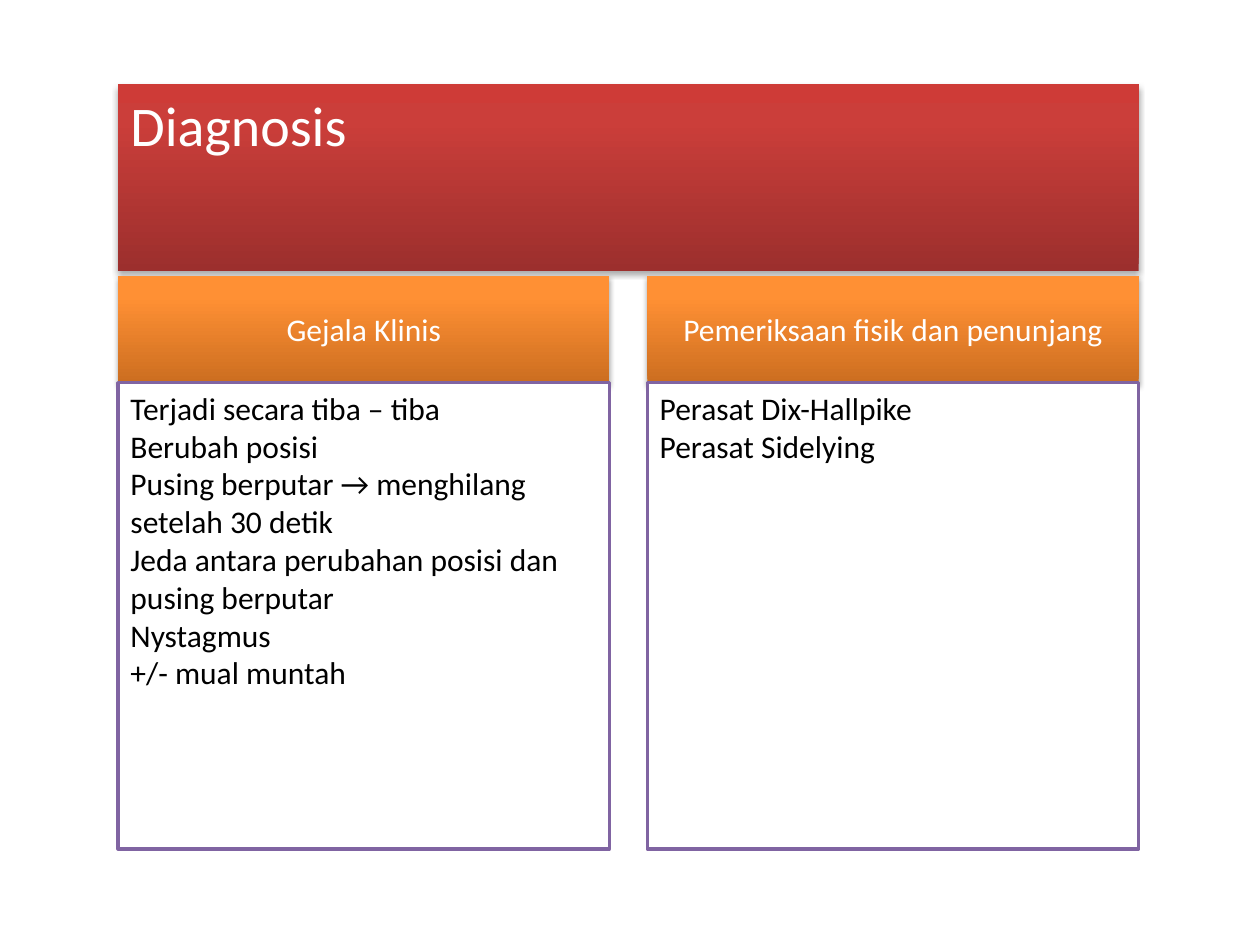
from copy import deepcopy

from lxml import etree
from pptx import Presentation
from pptx import util as u
from pptx.dml.color import RGBColor
from pptx.enum import shapes, text
from pptx.oxml import ns

WHITE = RGBColor(0xFF, 0xFF, 0xFF)
BLACK = RGBColor(0, 0, 0)
PURPLE = RGBColor(0x80, 0x64, 0xA2)
RED_STOPS = [(0, RGBColor(0x9C, 0x2F, 0x2D)),
             (0.8, RGBColor(0xCB, 0x3E, 0x3A)),
             (1, RGBColor(0xCE, 0x3B, 0x37))]
ORANGE_STOPS = [(0, RGBColor(0xCC, 0x6E, 0x20)),
                (0.8, RGBColor(0xFF, 0x90, 0x34)),
                (1, RGBColor(0xFF, 0x91, 0x36))]


class DiagnosisSlide:
    font_name = "Calibri"

    def __init__(self, presentation):
        self.slide = presentation.slides.add_slide(presentation.slide_layouts[6])

    def box(self, area, lines, size, color, anchor, align):
        """A plain rectangle holding one paragraph per line."""
        rect = self.slide.shapes.add_shape(
            shapes.MSO_SHAPE.RECTANGLE, *(u.Pt(length) for length in area))
        rect.shadow.inherit = False
        frame = rect.text_frame
        frame.word_wrap = True
        frame.vertical_anchor = anchor
        font_format = {"name": self.font_name, "size": u.Pt(size)}
        for index, line in enumerate(lines):
            paragraph = frame.add_paragraph() if index else frame.paragraphs[0]
            paragraph.alignment = align
            run = paragraph.add_run()
            run.text = line
            for key, value in font_format.items():
                setattr(run.font, key, value)
            run.font.color.rgb = color
        return rect

    def banner(self, area, caption, size, stops, anchor, align):
        """A shaded rectangle with a soft shadow and white text."""
        rect = self.box(area, [caption], size, WHITE, anchor, align)
        rect.line.fill.background()
        rect.fill.gradient()
        rect.fill.gradient_angle = 90
        properties = rect._element.spPr
        stop_list = properties.find(".//" + ns.qn("a:gsLst"))
        stop_list.append(deepcopy(stop_list[-1]))
        for stop, (position, color) in zip(rect.fill.gradient_stops, stops):
            stop.position = position
            stop.color.rgb = color
        self.drop_shadow(properties)

    def drop_shadow(self, properties):
        effects = properties.find(ns.qn("a:effectLst"))
        shadow = etree.SubElement(
            effects, ns.qn("a:outerShdw"), blurRad=str(u.Pt(3.1)),
            dist=str(u.Pt(1.8)), dir="5400000", rotWithShape="0")
        black = etree.SubElement(shadow, ns.qn("a:srgbClr"), val="000000")
        etree.SubElement(black, ns.qn("a:alpha"), val="35000")

    def panel(self, area, lines):
        """A white rectangle with a purple outline."""
        rect = self.box(area, lines, 18, BLACK,
                        text.MSO_ANCHOR.TOP, text.PP_ALIGN.LEFT)
        rect.fill.solid()
        rect.fill.fore_color.rgb = WHITE
        rect.line.color.rgb = PURPLE
        rect.line.width = u.Pt(2)


def main():
    presentation = Presentation()
    presentation.slide_width, presentation.slide_height = u.Pt(720), u.Pt(540)
    diagnosis = DiagnosisSlide(presentation)

    left, full_width, column_width = 67.5, 583.2, 280.8
    heading_top, heading_height = 157.5, 61.2
    findings_top, findings_height = heading_top + heading_height, 266.4

    # Title banner
    diagnosis.banner((left, 48, full_width, 106.8), "Diagnosis", 32, RED_STOPS,
                     text.MSO_ANCHOR.TOP, text.PP_ALIGN.LEFT)

    # Two columns: heading above its findings
    columns = [
        ("Gejala Klinis", [
            "Terjadi secara tiba – tiba",
            "Berubah posisi",
            "Pusing berputar → menghilang setelah 30 detik",
            "Jeda antara perubahan posisi dan pusing berputar",
            "Nystagmus",
            "+/- mual muntah",
        ]),
        ("Pemeriksaan fisik dan penunjang", [
            "Perasat Dix-Hallpike",
            "Perasat Sidelying",
        ]),
    ]
    column_step = full_width - column_width
    for index, (heading, findings) in enumerate(columns):
        x = left + index * column_step
        diagnosis.banner((x, heading_top, column_width, heading_height),
                         heading, 18, ORANGE_STOPS,
                         text.MSO_ANCHOR.MIDDLE, text.PP_ALIGN.CENTER)
        diagnosis.panel((x, findings_top, column_width, findings_height), findings)

    presentation.save("out.pptx")


if __name__ == "__main__":
    main()
